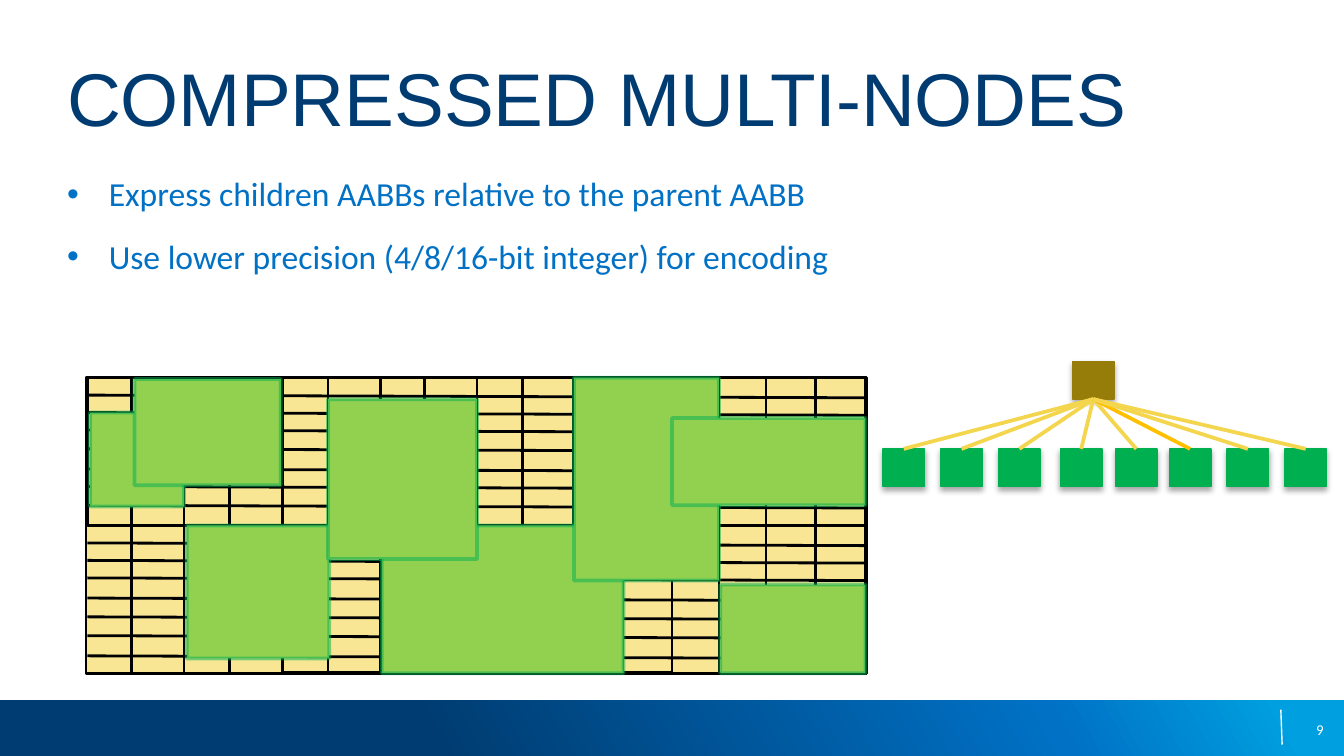
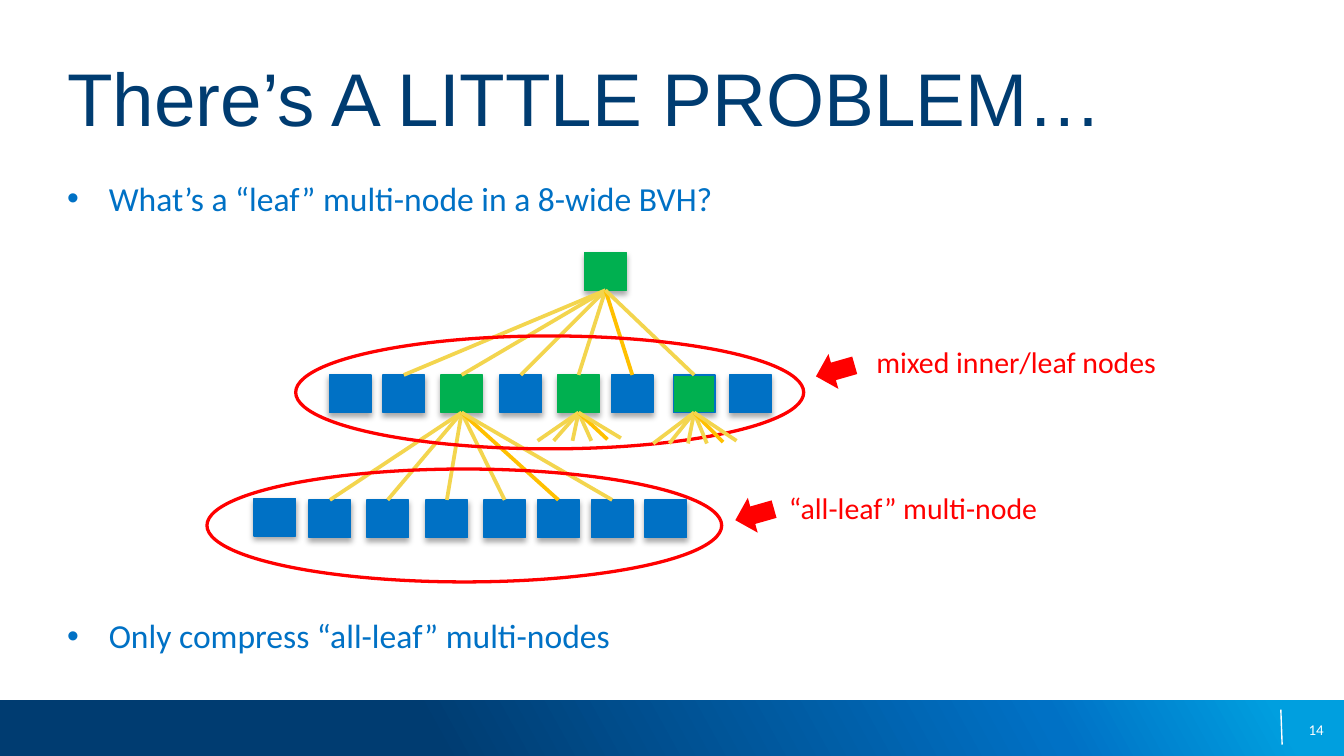
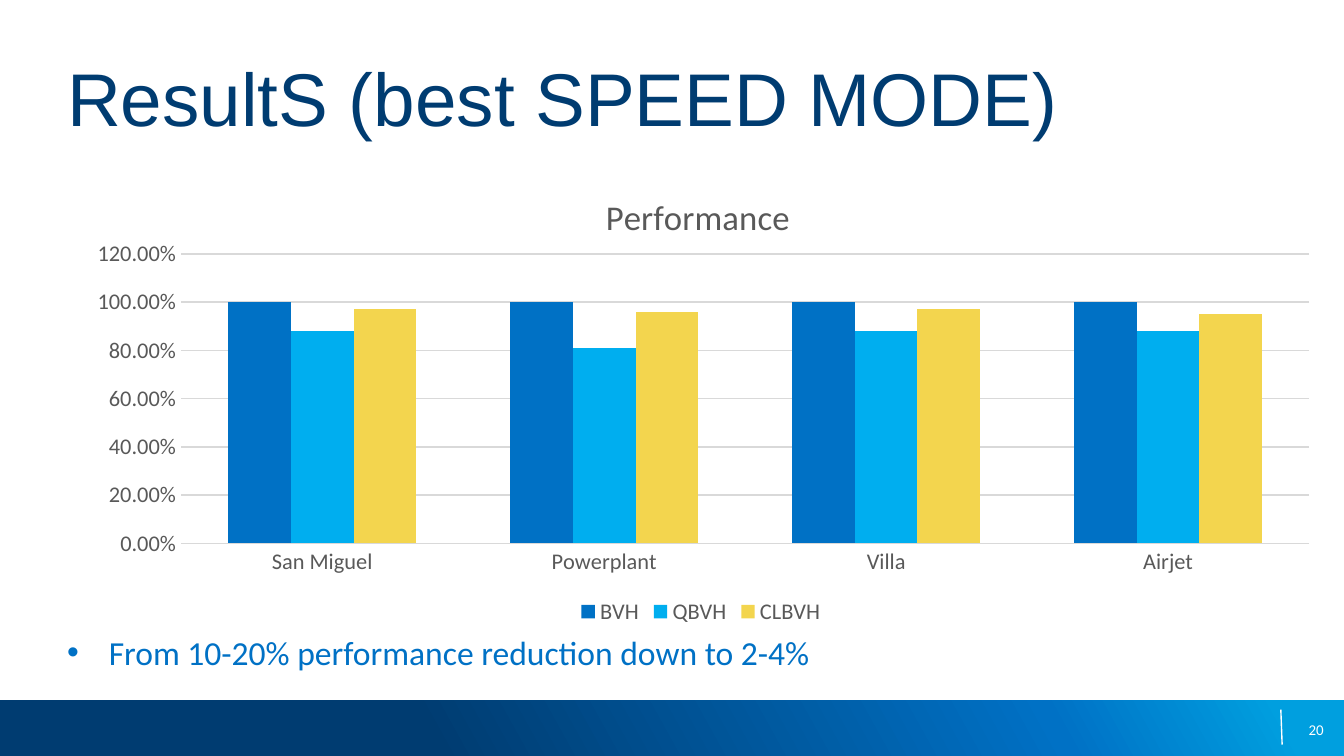
"""Builds three slides about compressed multi-node bounding volume hierarchies."""
from lxml import etree
from pptx import Presentation
from pptx import util as u
from pptx.chart import data as chart_data
from pptx.dml import color
from pptx.enum import chart as charts, shapes, text
from pptx.oxml import ns

PX = 9144
WIDTH = 1000
NODE_WIDTH, NODE_HEIGHT = 31, 28
COLORS = {
    "white": "FFFFFF", "black": "000000", "navy": "003C71", "blue": "0071C5",
    "cyan": "009FDF", "sky": "00AEEF", "yellow": "F3D54E", "orange": "FFC000",
    "cream": "F8E695", "lime": "92D050", "green": "00B050", "olive": "967D0A",
    "red": "FF0000", "gray": "595959", "grid": "D9D9D9",
}


def px(value):
    """Turn px into EMU."""
    return u.Emu(round(value * PX))


def rgb(name):
    """Look up a named colour."""
    return color.RGBColor.from_string(COLORS[name])


def add_child(parent, tag, **attributes):
    """Append an XML child with the given attributes."""
    child = etree.SubElement(parent, ns.qn(tag))
    for key, value in attributes.items():
        child.set(key, str(value))
    return child


def set_layout(element, index, **fractions):
    """Give a chart part a manual layout in fractions of the chart."""
    for old in element.findall(ns.qn("c:layout")):
        element.remove(old)
    layout = etree.Element(ns.qn("c:layout"))
    element.insert(index, layout)
    manual = add_child(layout, "c:manualLayout")
    if "w" in fractions:
        add_child(manual, "c:layoutTarget", val="inner")
    for axis in "xy":
        add_child(manual, f"c:{axis}Mode", val="edge")
    for key, value in fractions.items():
        add_child(manual, f"c:{key}", val=value)


class Deck:
    """Holds the shared style and the slide being built."""

    def __init__(self):
        """Start an empty widescreen presentation."""
        self.presentation = Presentation()
        self.presentation.slide_width = px(WIDTH)
        self.presentation.slide_height = px(WIDTH * 9 / 16)
        self.slide = None

    def new_slide(self, title, number):
        """Add a slide with its title, footer band and number."""
        self.slide = self.presentation.slides.add_slide(self.presentation.slide_layouts[6])
        band = self.shape((0, 521, WIDTH, 42), fill="navy")
        band.fill.gradient()
        band.fill.gradient_angle = 29
        stops = band.element.spPr.find(".//" + ns.qn("a:gsLst"))
        for stop in list(stops):
            stops.remove(stop)
        for position, name in ((32, "navy"), (78, "blue"), (95, "cyan")):
            stop = add_child(stops, "a:gs", pos=position * 1000)
            add_child(stop, "a:srgbClr", val=COLORS[name])
        self.line((953, 528), (954, 554), "white", 0.75)
        page = self.textbox((752, 528, 233, 30), [str(number)], 8, "white")
        page.vertical_anchor = text.MSO_ANCHOR.MIDDLE
        page.paragraphs[0].alignment = text.PP_ALIGN.RIGHT
        heading = self.textbox((50, 34, 900, 95), [title], 40, "navy", "Arial")
        heading.margin_top = px(5)

    def style_font(self, font, size, name, family="Calibri"):
        """Set size, colour and family of a font."""
        font.size, font.name, font.bold = u.Pt(size), family, False
        font.color.rgb = rgb(name)

    def textbox(self, box, lines, size, name, family="Calibri"):
        """Add a text box without insets and return its text frame."""
        frame = self.slide.shapes.add_textbox(*map(px, box)).text_frame
        frame.word_wrap = True
        frame.margin_left = frame.margin_right = frame.margin_top = frame.margin_bottom = 0
        for index, line in enumerate(lines):
            paragraph = frame.add_paragraph() if index else frame.paragraphs[0]
            run = paragraph.add_run()
            run.text = line
            self.style_font(run.font, size, name, family)
        return frame

    def bullets(self, box, lines, gap=12):
        """Add bulleted body text with a gap in points between paragraphs."""
        frame = self.textbox(box, lines, 18, "blue")
        for index, paragraph in enumerate(frame.paragraphs):
            if index:
                paragraph.space_before = u.Pt(gap)
            properties = paragraph._p.get_or_add_pPr()
            properties.set("marL", str(px(31)))
            properties.set("indent", str(-px(31)))
            add_child(properties, "a:buFont", typeface="Arial")
            add_child(properties, "a:buChar", char="•")

    def shape(self, box, fill=None, line=None, weight=0.75, kind="RECTANGLE", alpha=None):
        """Add a preset shape with optional fill and outline."""
        shape = self.slide.shapes.add_shape(shapes.MSO_SHAPE[kind], *map(px, box))
        shape.shadow.inherit = False
        if fill:
            shape.fill.solid()
            shape.fill.fore_color.rgb = rgb(fill)
        else:
            shape.fill.background()
        if line:
            shape.line.color.rgb = rgb(line)
            shape.line.width = u.Pt(weight)
        else:
            shape.line.fill.background()
        if alpha:
            stroke = shape.element.spPr.find(ns.qn("a:ln"))
            add_child(stroke.find(".//" + ns.qn("a:srgbClr")), "a:alpha", val=alpha * 1000)
        return shape

    def node(self, left, top, fill, line=None):
        """Add a tree node with a soft shadow."""
        node = self.shape((left, top, NODE_WIDTH, NODE_HEIGHT), fill, line or fill)
        effects = node.element.spPr.find(ns.qn("a:effectLst"))
        shadow = add_child(effects, "a:outerShdw", blurRad=u.Pt(3.1), dist=u.Pt(1.8),
                           dir=90 * 60000, rotWithShape=0)
        tint = add_child(shadow, "a:srgbClr", val=COLORS["black"])
        add_child(tint, "a:alpha", val=35000)
        return node

    def line(self, start, end, name, weight):
        """Add a straight line between two points."""
        points = map(px, (*start, *end))
        line = self.slide.shapes.add_connector(shapes.MSO_CONNECTOR.STRAIGHT, *points)
        line.line.color.rgb = rgb(name)
        line.line.width = u.Pt(weight)
        add_child(line.element.spPr, "a:effectLst")
        return line

    def branch(self, parent, end, highlighted):
        """Add a line from the bottom of a parent node to a point."""
        line = self.line((0, 0), end, "orange" if highlighted else "yellow", 2)
        line.begin_connect(parent, 2)
        return line

    def fan(self, parent, children, highlight):
        """Join a parent node to its children."""
        for index, child in enumerate(children):
            self.branch(parent, (0, 0), index == highlight).end_connect(child, 0)

    def stub_fan(self, parent, bottom):
        """Draw short branches that end below a node."""
        middle = (parent.left + parent.width / 2) / PX
        for index, (shift, rise) in enumerate(
                ((-31, 0), (-18, 0), (-4, 0), (9, 0), (21, 1), (32, 2))):
            self.branch(parent, (round(middle + shift), bottom - rise), index == 4)

    def callout(self, ring, arrow, label, words):
        """Ring a row of nodes and label it with an arrow."""
        self.shape(ring, line="red", weight=1.75, kind="OVAL")
        self.textbox(label, [words], 16, "red")
        self.shape((*arrow, 27, 30), fill="red", kind="DOWN_ARROW").rotation = 74.1

    def column_chart(self, box, title, categories, series):
        """Add a clustered column chart of percentages."""
        data = chart_data.CategoryChartData(number_format="0.00%")
        data.categories = categories
        for name, _, values in series:
            data.add_series(name, values)
        kind = charts.XL_CHART_TYPE.COLUMN_CLUSTERED
        chart = self.slide.shapes.add_chart(kind, *map(px, box), data).chart
        self.style_font(chart.font, 12, "gray")
        run = chart.chart_title.text_frame.paragraphs[0].add_run()
        run.text = title
        self.style_font(run.font, 18.6, "gray")
        chart.has_legend = True
        chart.legend.position = charts.XL_LEGEND_POSITION.BOTTOM
        chart.legend.include_in_layout = False
        self.style_font(chart.legend.font, 12, "gray")
        for axis in (chart.category_axis, chart.value_axis):
            axis.major_tick_mark = axis.minor_tick_mark = charts.XL_TICK_MARK.NONE
            axis.format.line.fill.background()
            self.style_font(axis.tick_labels.font, 12, "gray")
        values_axis = chart.value_axis
        values_axis.minimum_scale, values_axis.maximum_scale = 0, 1.2
        values_axis.major_unit = 0.2
        values_axis.tick_labels.number_format = "0.00%"
        values_axis.tick_labels.number_format_is_linked = False
        values_axis.major_gridlines.format.line.color.rgb = rgb("grid")
        values_axis.major_gridlines.format.line.width = u.Pt(0.75)
        plot = chart.plots[0]
        plot.gap_width, plot.overlap, plot.vary_by_categories = 150, 0, False
        for column, (_, name, _) in zip(plot.series, series):
            column.format.fill.solid()
            column.format.fill.fore_color.rgb = rgb(name)
        set_layout(chart.element.find(".//" + ns.qn("c:title")), 1, x=0.42, y=0.08)
        set_layout(chart.element.find(".//" + ns.qn("c:plotArea")), 0,
                   x=0.09, y=0.22, w=0.89, h=0.6)


def build_compressed_nodes(deck):
    """Show child boxes on a coarse grid beside their tree."""
    deck.new_slide("COMPRESSED MULTI-NODES", 9)
    deck.bullets((50, 129, 900, 375), [
        "Express children AABBs relative to the parent AABB",
        "Use lower precision (4/8/16-bit integer) for encoding"])
    parent_box = (64, 281, 580, 220)
    deck.shape(parent_box, fill="cream")
    for cell in (parent_box, (355, 281, 290, 220), (500, 281, 144, 110), (65, 281, 145, 110),
                 (210, 391, 145, 109), (355, 391, 145, 109)):
        deck.shape(cell, line="black", weight=1.5)
    for y in (294, 307, 320, 334, 349, 362, 376, 404, 417, 430, 445, 459, 473, 488):
        deck.line((65, y), (645, y + 2), "black", 1.5)
    for x in (98, 137, 171, 244, 283, 316, 389, 427, 463, 535, 570, 607):
        deck.line((x, 280), (x, 500), "black", 1.5)
    for child_box in ((67, 307, 70, 70), (100, 282, 109, 79), (139, 391, 106, 99),
                      (284, 391, 180, 110), (244, 297, 111, 119), (427, 281, 108, 151),
                      (500, 311, 144, 65), (536, 435, 108, 66)):
        deck.shape(child_box, "lime", "green", 2, alpha=50)
    root = deck.node(798, 269, "olive")
    children = [deck.node(left, 334, "green")
                for left in (657, 700, 743, 789, 830, 870, 913, 956)]
    deck.fan(root, children, 5)


def build_leaf_problem(deck):
    """Contrast mixed multi-nodes with all-leaf ones."""
    deck.new_slide("There’s A LITTLE PROBLEM…", 14)
    deck.bullets((50, 132, 950, 375), [
        "What’s a “leaf” multi-node in a 8-wide BVH?",
        "Only compress “all-leaf” multi-nodes"], gap=213)
    root = deck.node(435, 188, "green")
    mixed = [deck.node(left, 279, fill, line) for left, fill, line in (
        (245, "blue", None), (285, "blue", None), (328, "green", None), (372, "blue", None),
        (415, "green", None), (455, "blue", None), (501, "green", "blue"),
        (543, "blue", None))]
    leaves = [deck.node(left, top, "blue") for left, top in (
        (189, 371), (230, 372), (273, 372), (317, 372),
        (360, 372), (400, 372), (440, 372), (480, 372))]
    deck.fan(root, mixed[1:7], 4)
    deck.fan(mixed[2], leaves[1:7], 4)
    deck.callout((220, 250, 378, 84), (608, 261), (652, 256, 252, 27),
                 "mixed inner/leaf nodes")
    deck.callout((154, 349, 383, 84), (548, 368), (587, 364, 338, 27),
                 "“all-leaf” multi-node")
    deck.stub_fan(mixed[6], 330)
    deck.stub_fan(mixed[4], 328)


def build_results(deck):
    """Chart the performance of each structure."""
    deck.new_slide("ResultS (best SPEED MODE)", 20)
    deck.column_chart(
        (50, 110, 943, 359), "Performance",
        ["San Miguel", "Powerplant", "Villa", "Airjet"],
        [("BVH", "blue", (1, 1, 1, 1)),
         ("QBVH", "sky", (0.88, 0.81, 0.88, 0.88)),
         ("CLBVH", "yellow", (0.97, 0.96, 0.97, 0.95))])
    deck.bullets((50, 470, 950, 37), ["From 10-20% performance reduction down to 2-4%"])


def main():
    """Build and save the slides."""
    deck = Deck()
    build_compressed_nodes(deck)
    build_leaf_problem(deck)
    build_results(deck)
    deck.presentation.save("out.pptx")


if __name__ == "__main__":
    main()
